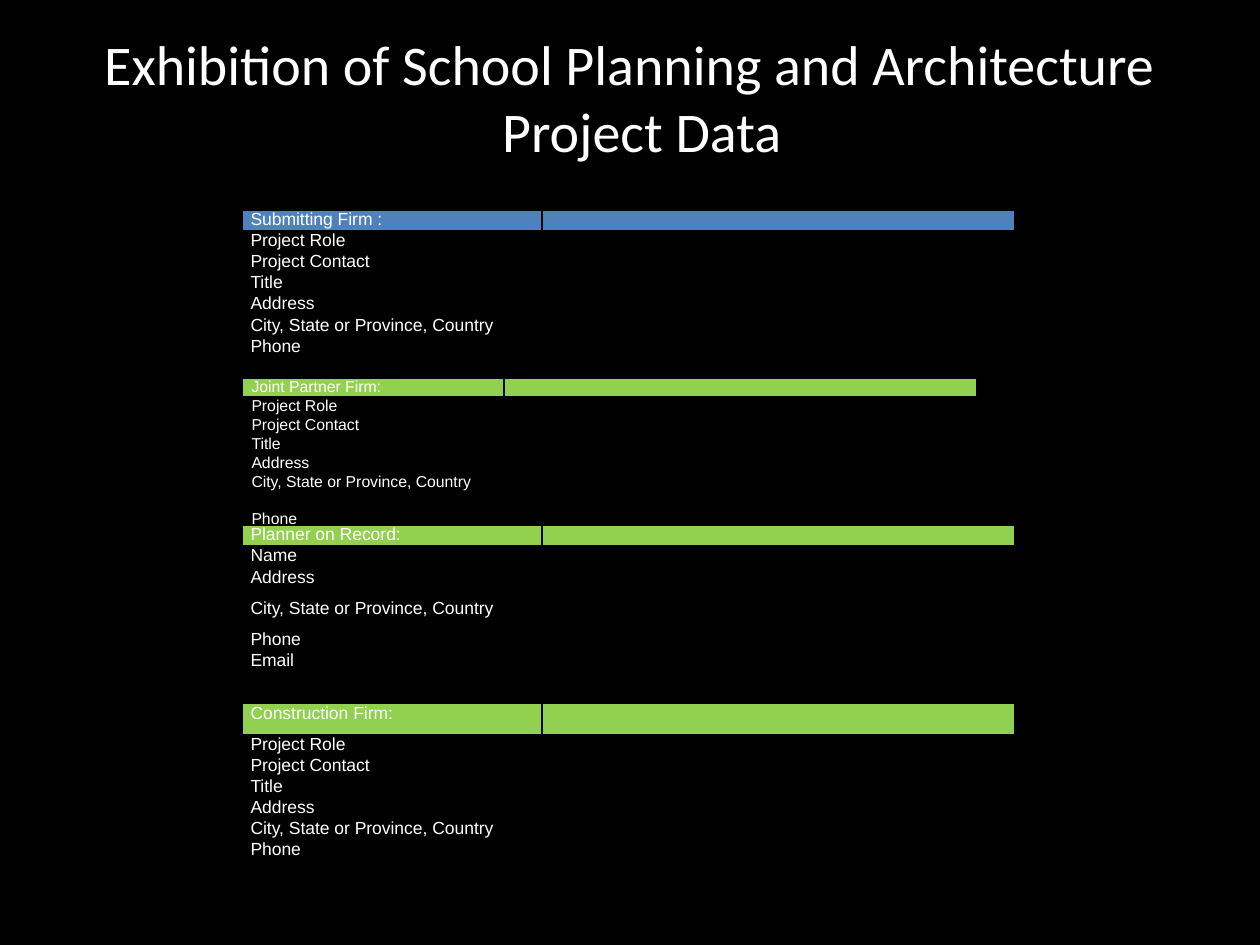
from dataclasses import dataclass

from lxml.etree import SubElement
from pptx import Presentation
from pptx.dml.color import RGBColor
from pptx.enum.text import MSO_ANCHOR, PP_ALIGN
from pptx.oxml import parse_xml
from pptx.oxml.ns import nsdecls, qn
from pptx.util import Cm, Pt


@dataclass(frozen=True)
class Theme:
    """Colours, fonts and type sizes of the slide."""
    backdrop: str = "000000"
    text: str = "FFFFFF"
    submitting: str = "4F81BD"
    partner: str = "92D050"
    title_font: str = "Calibri"
    body_font: str = "Arial"
    title_size: float = 32
    body_size: float = 10
    compact_size: float = 9
    outer_line: float = 1.5
    inner_line: float = 1


class ProjectSheet:
    """Draws styled elements on the current slide."""

    def __init__(self, slide, theme):
        """Keep the slide and theme, and paint the background."""
        self.slide, self.theme = slide, theme
        slide.background.fill.solid()
        slide.background.fill.fore_color.rgb = RGBColor.from_string(theme.backdrop)

    def add_words(self, paragraph, wording, font, size):
        """Add one styled run to a paragraph."""
        run = paragraph.add_run()
        run.text = wording
        run.font.name, run.font.size = font, Pt(size)
        run.font.color.rgb = RGBColor.from_string(self.theme.text)

    def title(self, lines, left, top, width, height):
        """Add the centred heading, its second line slightly indented."""
        frame = self.slide.shapes.add_textbox(Cm(left), Cm(top), Cm(width), Cm(height)).text_frame
        frame.word_wrap = True
        frame.vertical_anchor = MSO_ANCHOR.MIDDLE
        frame.margin_top, frame.margin_bottom = 0, Cm(1.37)
        for index, line in enumerate(lines):
            paragraph = frame.add_paragraph() if index else frame.paragraphs[0]
            paragraph.alignment = PP_ALIGN.CENTER
            paragraph._p.get_or_add_pPr().set("marL", str(Cm(0.48 * index)))
            self.add_words(paragraph, line, self.theme.title_font, self.theme.title_size)

    def border(self, cell, widths):
        """Line the left, right, top and bottom edges of a cell."""
        properties = cell._tc.get_or_add_tcPr()
        for index, (edge, width) in enumerate(zip("LRTB", widths)):
            properties.insert(index, parse_xml(
                f'<a:ln{edge} {nsdecls("a")} w="{Pt(width)}"><a:solidFill>'
                f'<a:srgbClr val="{self.theme.backdrop}"/></a:solidFill></a:ln{edge}>'))

    def firm_table(self, top, labels, heights, accent, columns, size, inset):
        """Add a two-column form with a coloured heading row."""
        table = self.slide.shapes.add_table(
            len(labels), len(columns), Cm(4.87), Cm(top), Cm(sum(columns)), Cm(sum(heights))).table
        table.first_row = table.horz_banding = False
        for column, width in zip(table.columns, columns):
            column.width = Cm(width)
        outer, inner = self.theme.outer_line, self.theme.inner_line
        sides = ((outer, inner), (inner, outer))
        for index, (row, label, height) in enumerate(zip(table.rows, labels, heights)):
            row.height = Cm(height)
            for cell, wording, side in zip(row.cells, (label, ""), sides):
                cell.margin_left = cell.margin_right = Cm(inset)
                cell.margin_top = cell.margin_bottom = 0
                if index:
                    cell.fill.background()
                else:
                    cell.fill.solid()
                    cell.fill.fore_color.rgb = RGBColor.from_string(accent)
                self.border(cell, (*side, inner, inner))
                paragraph = cell.text_frame.paragraphs[0]
                if wording:
                    self.add_words(paragraph, wording, self.theme.body_font, size)
                else:
                    SubElement(paragraph._p, qn("a:endParaRPr"), sz=str(int(size * 100)))


def main():
    """Build and save the project data slide."""
    deck = Presentation()
    deck.slide_width, deck.slide_height = Cm(25.4), Cm(19.05)
    theme = Theme()
    sheet = ProjectSheet(deck.slides.add_slide(deck.slide_layouts[6]), theme)
    sheet.title(("Exhibition of School Planning and Architecture", "Project Data"),
                1.27, 1.47, 22.86, 2.34)

    city = "City, State or Province, Country"
    contact = ["Project Role", "Project Contact", "Title", "Address", city, "Phone"]
    planner = ["Name", "Address", city, "Phone", "Email", ""]
    line, compact, tall = 0.39, 0.38, 0.63
    regular = ((6.06, 9.54), theme.body_size, 0.18)
    narrow = ((5.29, 9.54), theme.compact_size, 0.2)
    forms = (
        (4.23, ["Submitting Firm :"] + contact, [line] * 7, theme.submitting, regular),
        (7.62, ["Joint Partner Firm:"] + contact,
         [compact] * 5 + [2 * compact, compact], theme.partner, narrow),
        (10.58, ["Planner on Record:"] + planner,
         [line, 0.43, tall, tall, line, line, tall], theme.partner, regular),
        (14.18, ["Construction Firm:"] + contact, [tall] + [line] * 6, theme.partner, regular),
    )
    for top, labels, heights, accent, layout in forms:
        sheet.firm_table(top, labels, heights, accent, *layout)
    deck.save("out.pptx")


if __name__ == "__main__":
    main()
